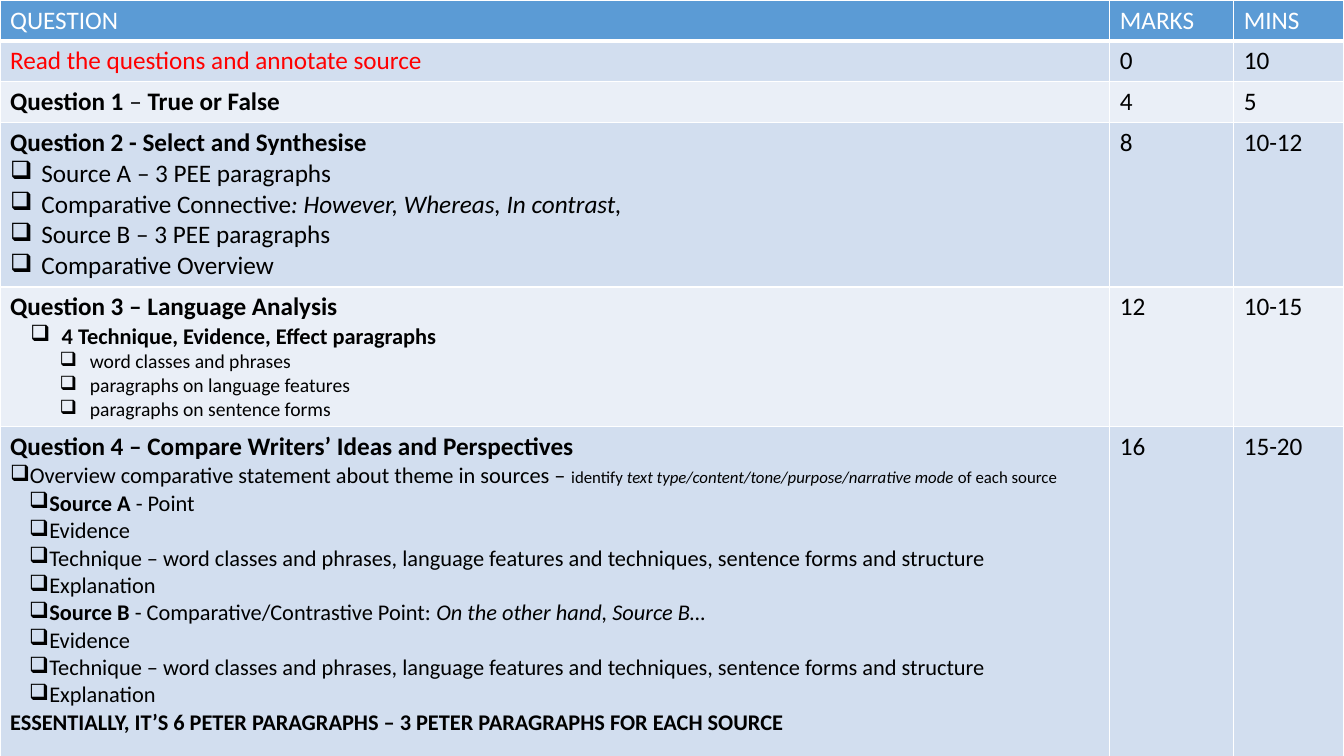
"""Build a one-slide exam plan table of questions, marks and minutes."""
from lxml import etree
from pptx import Presentation
from pptx.dml.color import RGBColor
from pptx.oxml import ns
from pptx.util import Cm, Pt

FONT = "Calibri"
WHITE, BLACK, RED = "FFFFFF", "000000", "FF0000"
HEADER, DARK_BAND, LIGHT_BAND = "5B9BD5", "D2DEEF", "EAEFF7"
COLUMNS = [27.97, 3.12, 2.78]
HEIGHTS = [1.03, 1.03, 1.03, 4.14, 3.51, 8.31]

# kind: (level, left margin in cm, hanging indent in cm, bullet, size)
KINDS = {
    "head": (0, 0, 0, "", 18),
    "item": (0, 0.79, 0.79, "❑", 18),
    "task": (1, 1.3, 0.79, "❑", 16),
    "detail": (2, 2.01, 0.76, "❑", 14),
    "overview": (0, 0.48, 0.48, "❑", 16),
    "step": (0, 0.99, 0.51, "❑", 16),
    "summary": (0, 0.48, 0.48, "", 16),
}

STEPS = [
    ("step", [("Evidence", "")]),
    ("step", [("Technique – word classes and phrases, language features "
               "and techniques, sentence forms and structure", "")]),
    ("step", [("Explanation", "")]),
]

# each row: question paragraphs, marks, minutes; runs are (text, style[, size])
ROWS = [
    ([("head", [("QUESTION", "")])], "MARKS", "MINS"),
    ([("head", [("Read the questions and annotate source", "r")])], "0", "10"),
    ([("head", [("Question 1 ", "b"), ("– ", ""), ("True or False", "b")])], "4", "5"),
    ([("head", [("Question 2 - Select and Synthesise", "b")]),
      ("item", [("Source A – 3 PEE paragraphs", "")]),
      ("item", [("Comparative Connective", ""),
                (": However, Whereas, In contrast,", "i")]),
      ("item", [("Source B – 3 PEE paragraphs", "")]),
      ("item", [("Comparative Overview", "")])], "8", "10-12"),
    ([("head", [("Question 3 – Language Analysis", "b")]),
      ("task", [("4 Technique, Evidence, Effect paragraphs", "b")]),
      ("detail", [("word classes and phrases", "")]),
      ("detail", [("paragraphs on language features", "")]),
      ("detail", [("paragraphs on sentence forms", "")])], "12", "10-15"),
    ([("head", [("Question 4 – Compare Writers’ Ideas and Perspectives", "b")]),
      ("overview", [("Overview comparative statement about theme in sources – ", ""),
                    ("identify ", "", 12),
                    ("text type/content/tone/purpose/narrative mode ", "i", 12),
                    ("of each source", "", 12)]),
      ("step", [("Source A", "b"), (" - Point", "")]),
      *STEPS,
      ("step", [("Source B", "b"), (" - Comparative/Contrastive Point: ", ""),
                ("On the other hand, Source B…", "i")]),
      *STEPS,
      ("summary", [("ESSENTIALLY, IT’S 6 PETER PARAGRAPHS – "
                    "3 PETER PARAGRAPHS FOR EACH SOURCE", "b")])], "16", "15-20"),
]


def rgb(value):
    """Turn a hex string into a colour."""
    return RGBColor.from_string(value)


def set_borders(cell, widths):
    """Draw white borders; widths maps each side's tag to points."""
    tc_pr = cell._tc.get_or_add_tcPr()
    for i, (side, width) in enumerate(widths.items()):
        ln = etree.Element(ns.qn(f"a:{side}"), w=str(Pt(width)))
        fill = etree.SubElement(ln, ns.qn("a:solidFill"))
        etree.SubElement(fill, ns.qn("a:srgbClr"), val=WHITE)
        tc_pr.insert(i, ln)


def write_paragraph(p, kind, runs, color):
    """Format one paragraph and add its runs."""
    level, left, hang, bullet, size = KINDS[kind]
    p.level = level
    p_pr = p._p.get_or_add_pPr()
    p_pr.set("marL", str(Cm(left)))
    p_pr.set("indent", str(-Cm(hang)))
    if bullet:
        etree.SubElement(p_pr, ns.qn("a:buChar"), char=bullet)
    for content, style, *special_size in runs:
        r = p.add_run()
        r.text = content
        r.font.name = FONT
        r.font.size = Pt(special_size[0] if special_size else size)
        r.font.bold = "b" in style
        r.font.italic = "i" in style
        r.font.color.rgb = rgb(RED if "r" in style else color)


def main():
    """Lay out the table and save the slide."""
    prs = Presentation()
    prs.slide_width, prs.slide_height = Cm(33.87), Cm(19.05)
    s = prs.slides.add_slide(prs.slide_layouts[6])
    table = s.shapes.add_table(len(ROWS), len(COLUMNS), 0, 0,
                               prs.slide_width, prs.slide_height).table
    for column, width in zip(table.columns, COLUMNS):
        column.width = Cm(width)
    for i, (question, *numbers) in enumerate(ROWS):
        table.rows[i].height = Cm(HEIGHTS[i])
        band = HEADER if i == 0 else DARK_BAND if i % 2 else LIGHT_BAND
        cells = [question] + [[("head", [(n, "")])] for n in numbers]
        for j, paragraphs in enumerate(cells):
            cell = table.cell(i, j)
            cell.fill.solid()
            cell.fill.fore_color.rgb = rgb(band)
            set_borders(cell, {"lnL": 1, "lnR": 1, "lnT": 3 if i == 1 else 1,
                               "lnB": 3 if i == 0 else 1})
            tf = cell.text_frame
            for k, (kind, runs) in enumerate(paragraphs):
                p = tf.add_paragraph() if k else tf.paragraphs[0]
                write_paragraph(p, kind, runs, BLACK if i else WHITE)
    prs.save("out.pptx")


if __name__ == "__main__":
    main()
